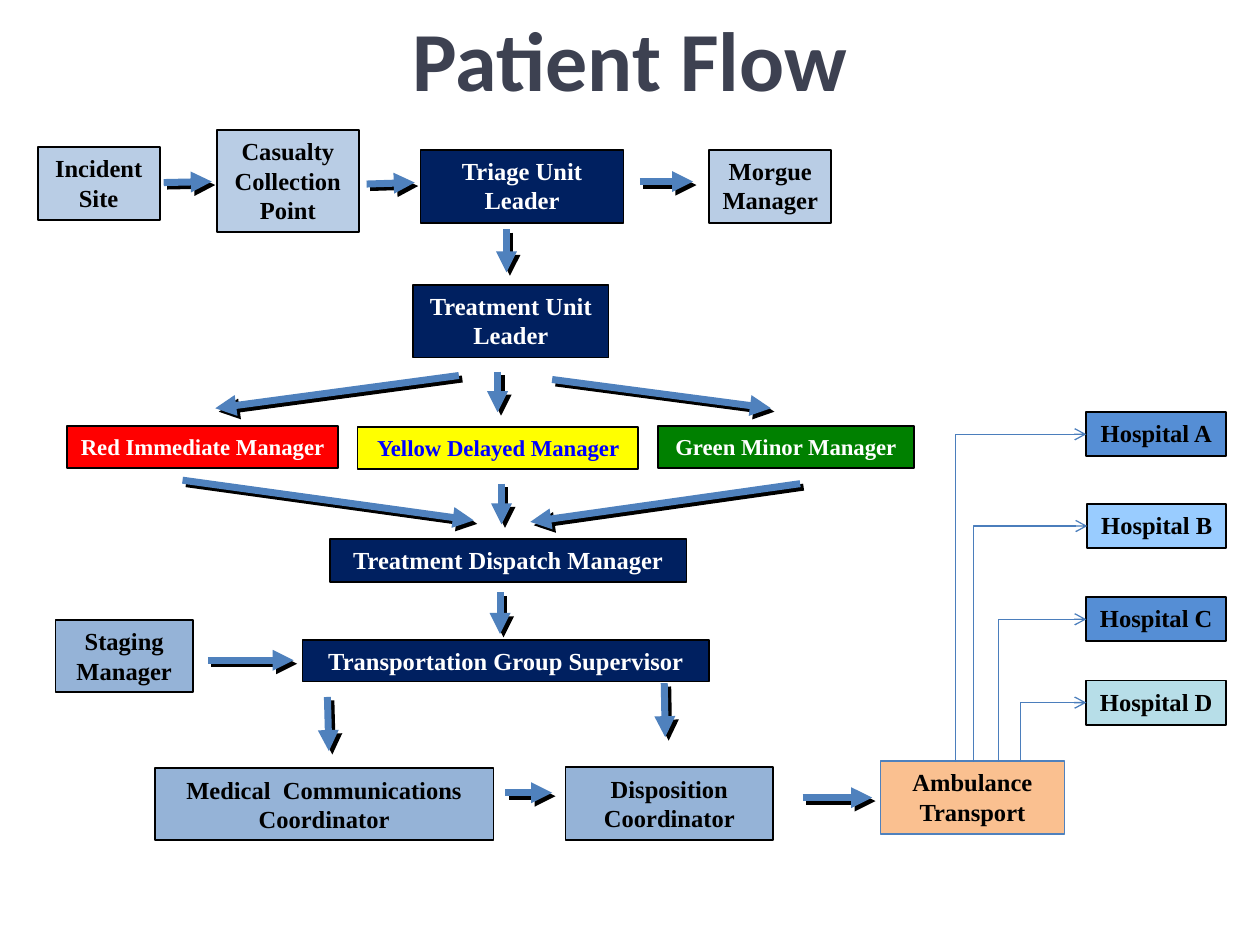
from dataclasses import dataclass
from typing import Any

from lxml.etree import SubElement
from pptx import Presentation
from pptx.dml.color import RGBColor as RGB
from pptx.enum.shapes import MSO_CONNECTOR as Conn, MSO_SHAPE as Geo
from pptx.enum.text import MSO_ANCHOR as Anchor, MSO_AUTO_SIZE as Fit, PP_ALIGN as Align
from pptx.oxml.ns import qn
from pptx.util import Cm, Pt


@dataclass(frozen=True)
class Theme:
    title_font: str = "Calibri"
    box_font: str = "Times New Roman"
    title_size: float = 48
    box_size: float = 14
    triage_size: float = 13
    border: float = 1
    arrow: float = 4
    route: float = 0.75
    title: str = "3D4151"
    black: str = "000000"
    white: str = "FFFFFF"
    blue: str = "0000FF"
    navy: str = "002060"
    pale: str = "B9CDE5"
    steel: str = "95B3D7"
    red: str = "FF0000"
    yellow: str = "FFFF00"
    green: str = "008000"
    orange: str = "FAC090"
    accent: str = "4F81BD"
    route_line: str = "4B7EBC"
    azure: str = "558ED5"
    sky: str = "99CCFF"
    aqua: str = "B7DEE8"


T = Theme()


@dataclass(frozen=True)
class Box:
    text: str
    x: float
    y: float
    w: float
    h: float
    fill: str
    color: str = T.black
    size: float = T.box_size
    line: str = T.black
    wrap: bool = True


@dataclass(frozen=True)
class Arrow:
    x1: float
    y1: float
    x2: float
    y2: float


@dataclass(frozen=True)
class Hospital:
    name: str
    x: float
    y: float
    fill: str
    route_x: float


HOSPITAL_RIGHT, HOSPITAL_H = 24.72, 0.89
AMBULANCE = Box("Ambulance Transport", 17.75, 15.34, 3.71, 1.47, T.orange, line=T.accent)

BOXES = [
    Box("Incident Site", 0.76, 2.97, 2.46, 1.47, T.pale),
    Box("Casualty\nCollection\nPoint", 4.37, 2.62, 2.87, 2.06, T.pale),
    Box("Triage Unit Leader", 8.48, 3.02, 4.09, 1.47, T.navy, T.white),
    Box("Morgue\nManager", 14.3, 3.02, 2.46, 1.47, T.pale, wrap=False),
    Box("Treatment Unit Leader", 8.33, 5.74, 3.94, 1.47, T.navy, T.white),
    Box("Red Immediate Manager", 1.35, 8.59, 5.46, 0.84, T.red, T.white, T.triage_size, wrap=False),
    Box("Yellow Delayed Manager", 7.21, 8.61, 5.66, 0.84, T.yellow, T.blue, T.triage_size),
    Box("Green Minor Manager", 13.26, 8.59, 5.16, 0.84, T.green, T.white, T.triage_size),
    Box("Treatment Dispatch Manager", 6.65, 10.87, 7.19, 0.86, T.navy, T.white),
    Box("Staging Manager", 1.12, 12.5, 2.77, 1.45, T.steel),
    Box("Transportation Group Supervisor", 6.1, 12.9, 8.2, 0.84, T.navy, T.white),
    Box("Medical  Communications Coordinator", 3.12, 15.49, 6.83, 1.45, T.steel),
    Box("Disposition Coordinator", 11.4, 15.47, 4.19, 1.47, T.steel),
    AMBULANCE,
]

ARROWS = [
    Arrow(3.3, 3.68, 4.27, 3.66),
    Arrow(7.39, 3.71, 8.36, 3.68),
    Arrow(12.9, 3.66, 13.97, 3.66),
    Arrow(10.21, 4.62, 10.21, 5.49),
    Arrow(9.25, 7.57, 4.34, 8.23),
    Arrow(10.03, 7.49, 10.03, 8.31),
    Arrow(11.13, 7.65, 15.54, 8.23),
    Arrow(3.68, 9.68, 9.55, 10.49),
    Arrow(10.11, 9.75, 10.11, 10.57),
    Arrow(16.13, 9.75, 10.69, 10.52),
    Arrow(10.08, 11.94, 10.08, 12.78),
    Arrow(4.19, 13.31, 5.92, 13.31),
    Arrow(6.6, 14.05, 6.63, 15.14),
    Arrow(13.39, 13.77, 13.41, 14.86),
    Arrow(10.19, 15.98, 11.13, 15.98),
    Arrow(16.18, 16.08, 17.58, 16.08),
]

HOSPITALS = [
    Hospital("Hospital A", 21.9, 8.31, T.azure, 19.25),
    Hospital("Hospital B", 21.92, 10.16, T.sky, 19.61),
    Hospital("Hospital C", 21.9, 12.04, T.azure, 20.12),
    Hospital("Hospital D", 21.9, 13.72, T.aqua, 20.57),
]


def style_text(tf: Any, font: str, size: float, color: str) -> None:
    for p in tf.paragraphs:
        p.alignment = Align.CENTER
        for r in p.runs:
            r.font.name = font
            r.font.size = Pt(size)
            r.font.bold = True
            r.font.color.rgb = RGB.from_string(color)


def add_title(s: Any, text: str) -> None:
    title = s.shapes.title
    title.left, title.top, title.width, title.height = Cm(0), Cm(-0.43), Cm(25.4), Cm(3.18)
    tf = title.text_frame
    tf.text = text
    tf.vertical_anchor = Anchor.MIDDLE
    style_text(tf, T.title_font, T.title_size, T.title)


def add_box(s: Any, box: Box) -> None:
    sp = s.shapes.add_shape(Geo.RECTANGLE, Cm(box.x), Cm(box.y), Cm(box.w), Cm(box.h))
    sp.shadow.inherit = False
    sp.fill.solid()
    sp.fill.fore_color.rgb = RGB.from_string(box.fill)
    sp.line.color.rgb = RGB.from_string(box.line)
    sp.line.width = Pt(T.border)
    tf = sp.text_frame
    tf.text = box.text
    tf.word_wrap = box.wrap
    tf.auto_size = Fit.SHAPE_TO_FIT_TEXT
    tf.vertical_anchor = Anchor.TOP
    style_text(tf, T.box_font, box.size, box.color)


def add_line(s: Any, kind: Any, a: Arrow, color: str, width: float, head: str) -> Any:
    cxn = s.shapes.add_connector(kind, Cm(a.x1), Cm(a.y1), Cm(a.x2), Cm(a.y2))
    cxn.line.color.rgb = RGB.from_string(color)
    cxn.line.width = Pt(width)
    props = cxn._element.spPr
    SubElement(props.find(qn("a:ln")), qn("a:tailEnd"), type=head)
    SubElement(props, qn("a:effectLst"))
    return props


def add_arrow(s: Any, a: Arrow) -> None:
    props = add_line(s, Conn.STRAIGHT, a, T.accent, T.arrow, "triangle")
    shadow = SubElement(props.find(qn("a:effectLst")), qn("a:outerShdw"),
                        dist=str(Pt(2.8)), dir="2700000", algn="ctr", rotWithShape="0")
    SubElement(shadow, qn("a:srgbClr"), val=T.black)


def add_hospital(s: Any, h: Hospital) -> None:
    add_box(s, Box(h.name, h.x, h.y, HOSPITAL_RIGHT - h.x, HOSPITAL_H, h.fill, wrap=False))
    route = Arrow(h.route_x, AMBULANCE.y, h.x, h.y + HOSPITAL_H / 2)
    props = add_line(s, Conn.ELBOW, route, T.route_line, T.route, "arrow")
    geom = props.find(qn("a:prstGeom"))
    guides = geom.find(qn("a:avLst"))
    if guides is None:
        guides = SubElement(geom, qn("a:avLst"))
    SubElement(guides, qn("a:gd"), name="adj1", fmla="val 500")


def main() -> None:
    prs = Presentation()
    prs.slide_width, prs.slide_height = Cm(25.4), Cm(19.05)
    s = prs.slides.add_slide(prs.slide_layouts[5])
    add_title(s, "Patient Flow")
    for box in BOXES:
        add_box(s, box)
    for arrow in ARROWS:
        add_arrow(s, arrow)
    for hospital in HOSPITALS:
        add_hospital(s, hospital)
    prs.save("out.pptx")


if __name__ == "__main__":
    main()
